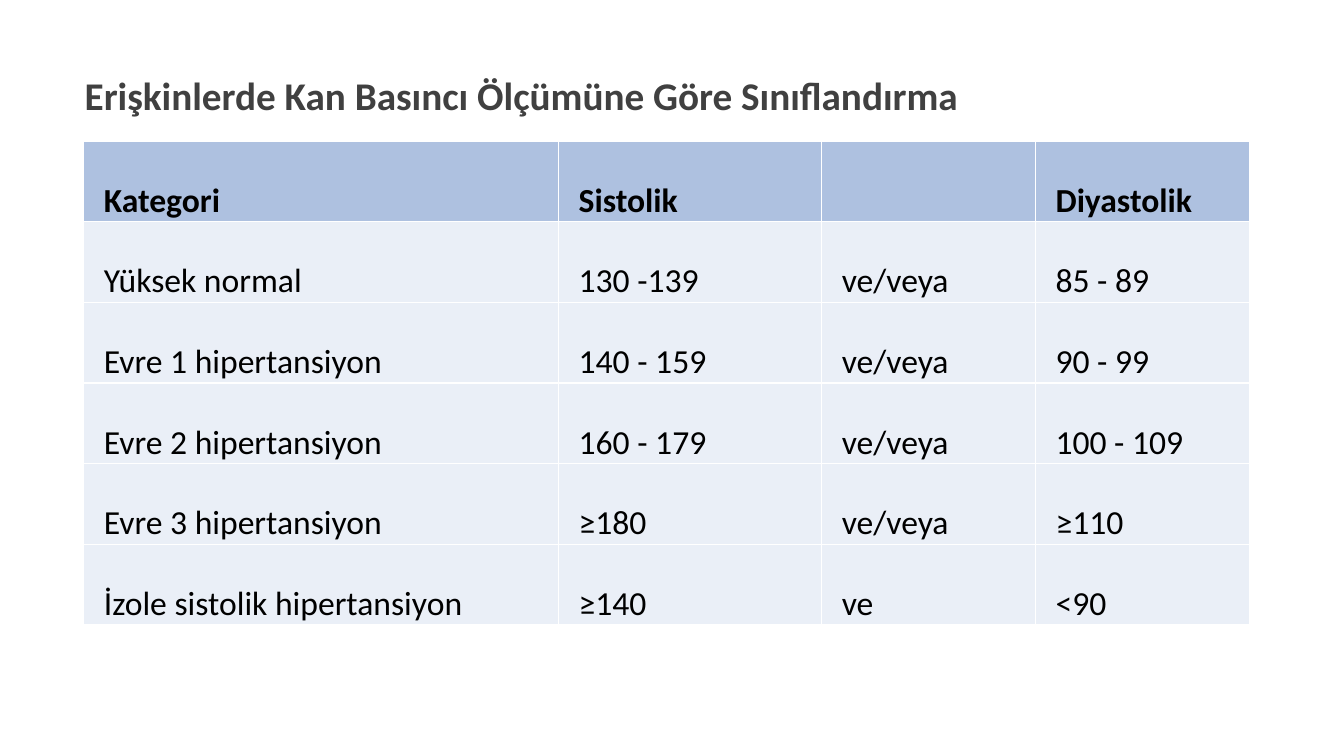
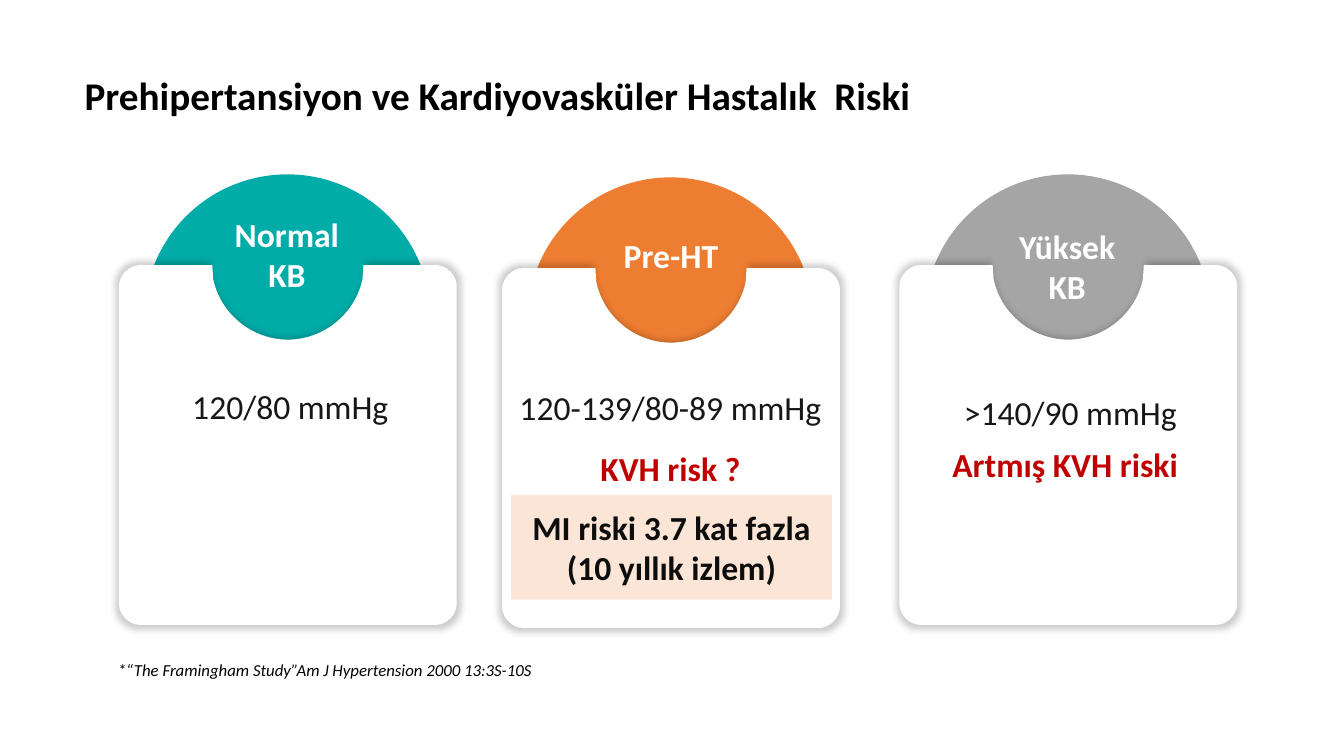
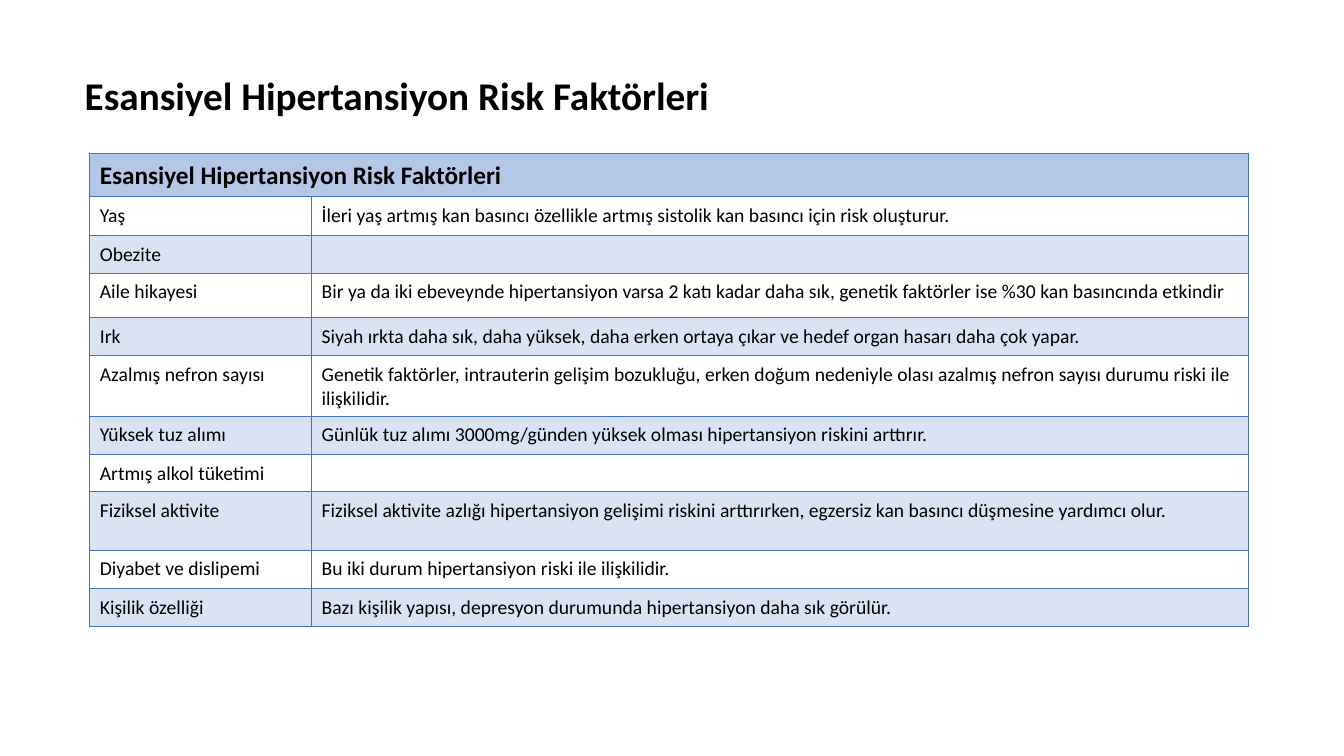
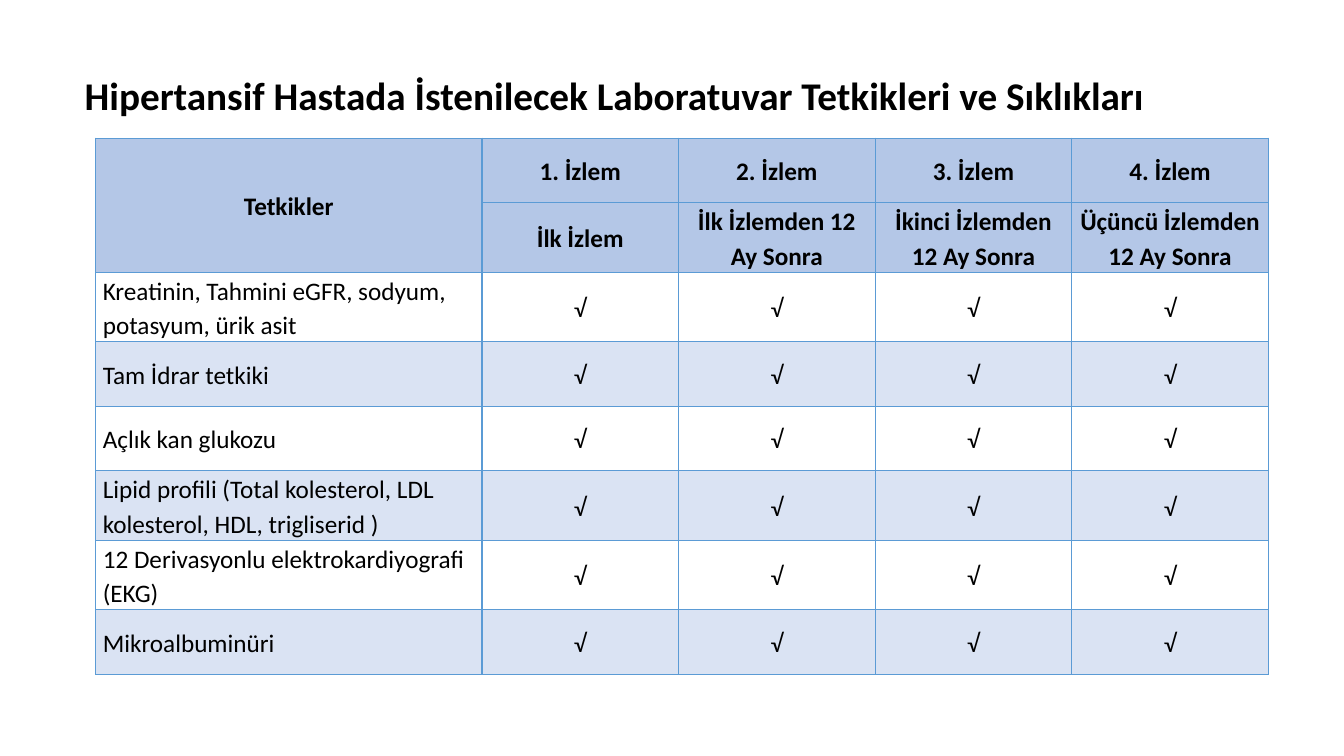
from lxml.etree import SubElement
from pptx import Presentation
from pptx.dml.color import RGBColor
from pptx.enum.shapes import MSO_SHAPE
from pptx.enum.text import MSO_ANCHOR, MSO_AUTO_SIZE, PP_ALIGN
from pptx.oxml.ns import qn
from pptx.util import Inches, Pt

FONT = "Calibri"
COLORS = {
    "black": "000000", "white": "FFFFFF", "gray_text": "404040",
    "ink": "181717", "note": "0D0D0D", "red": "C00000",
    "teal": "00ACA8", "orange": "ED7D31", "gray": "A5A5A5", "peach": "FBE5D6",
    "head_soft": "AEC1E0", "row_soft": "EAEFF7",
    "head": "B4C7E7", "band": "DAE3F3", "blue": "4472C4", "sky": "5B9BD5",
}


def rgb(name):
    """Return the palette colour called name."""
    return RGBColor.from_string(COLORS[name])


def add_run(p, text, size, color="black", bold=False, italic=False):
    """Add one formatted run to a paragraph."""
    r = p.add_run()
    r.text = text
    r.font.name, r.font.size = FONT, Pt(size)
    r.font.bold, r.font.italic = bold, italic
    r.font.color.rgb = rgb(color)


def add_title(s, text, color="black", width=10):
    """Place and format the slide title."""
    sp = s.shapes.title
    sp.left, sp.top, sp.width, sp.height = map(Inches, (0.74, 0.66, width, 0.57))
    tf = sp.text_frame
    tf.auto_size, tf.vertical_anchor = MSO_AUTO_SIZE.NONE, MSO_ANCHOR.TOP
    p = tf.paragraphs[0]
    p.alignment = PP_ALIGN.LEFT
    add_run(p, text, 28, color, bold=True)


def fill_text(tf, lines, size=24, align=PP_ALIGN.CENTER, spacing=None, italic=False):
    """Write (text, colour, bold) lines as paragraphs."""
    tf.word_wrap = True
    for i, (text, color, bold) in enumerate(lines):
        p = tf.add_paragraph() if i else tf.paragraphs[0]
        p.alignment, p.line_spacing = align, spacing
        add_run(p, text, size, color, bold, italic)


def add_text(shapes, at, lines, **style):
    """Add a text box at left, top, width, height."""
    fill_text(shapes.add_textbox(*map(Inches, at)).text_frame, lines, **style)


def add_solid(shapes, kind, at, color):
    """Add a preset shape with a plain fill and no line."""
    sp = shapes.add_shape(kind, *map(Inches, at))
    sp.shadow.inherit = False
    sp.fill.solid()
    sp.fill.fore_color.rgb = rgb(color)
    sp.line.fill.background()
    return sp


def add_soft_shadow(sp):
    """Give a shape an even, blurred shadow slightly larger than itself."""
    sp.shadow.inherit = False
    effects = sp._element.spPr.find(qn("a:effectLst"))
    shadow = SubElement(effects, qn("a:outerShdw"), blurRad=str(Pt(5)), sx="102000",
                        sy="102000", algn="ctr", rotWithShape="0")
    clr = SubElement(shadow, qn("a:srgbClr"), val=COLORS["black"])
    SubElement(clr, qn("a:alpha"), val="20000")


def set_outline(sp, steps):
    """Replace the outline of a freeform by (command, points) steps in inches."""
    outline = next(sp._element.iter(qn("a:path")))
    for child in list(outline):
        outline.remove(child)
    for command, *points in steps:
        step = SubElement(outline, qn(f"a:{command}"))
        for x, y in points:
            SubElement(step, qn("a:pt"), x=str(Inches(x)), y=str(Inches(y)))
    SubElement(outline, qn("a:close"))


def add_notched_card(shapes, left, top, w=3.35, h=3.57):
    """Add a rounded white card with a half-round notch in its top edge."""
    r, k, mid = 0.21, 0.1, w / 2
    fb = shapes.build_freeform(Inches(left), Inches(top), scale=1.0)
    fb.add_line_segments([(Inches(left + x), Inches(top + y)) for x, y in ((w, 0), (w, h), (0, h))])
    sp = fb.convert_to_shape()
    set_outline(sp, [
        ("moveTo", (r, 0)),
        ("lnTo", (mid - 0.75, 0)),
        ("lnTo", (mid - 0.74, 0.14)),
        ("cubicBezTo", (mid - 0.67, 0.48), (mid - 0.36, 0.74), (mid, 0.74)),
        ("cubicBezTo", (mid + 0.36, 0.74), (mid + 0.67, 0.48), (mid + 0.74, 0.14)),
        ("lnTo", (mid + 0.75, 0)),
        ("lnTo", (w - r, 0)),
        ("cubicBezTo", (w - k, 0), (w, k), (w, r)),
        ("lnTo", (w, h - r)),
        ("cubicBezTo", (w, h - k), (w - k, h), (w - r, h)),
        ("lnTo", (r, h)),
        ("cubicBezTo", (k, h), (0, h - k), (0, h - r)),
        ("lnTo", (0, r)),
        ("cubicBezTo", (0, k), (k, 0), (r, 0)),
    ])
    sp.fill.solid()
    sp.fill.fore_color.rgb = rgb("white")
    sp.line.fill.background()
    add_soft_shadow(sp)


def add_risk_card(s, left, top, color, label, label_at, texts, note=None):
    """Add one grouped card: disc, notched panel, label and texts."""
    shapes = s.shapes.add_group_shape().shapes
    add_solid(shapes, MSO_SHAPE.OVAL, (left + 0.25, top - 0.9, 2.84, 2.84), color)
    add_notched_card(shapes, left, top)
    add_text(shapes, label_at, [(label, "white", True)])
    for at, spacing, lines in texts:
        add_text(shapes, at, lines, spacing=spacing)
    if note:
        sp = add_solid(shapes, MSO_SHAPE.RECTANGLE, (left + 0.09, top + 2.25, 3.18, 1.04), "peach")
        sp.text_frame.vertical_anchor = MSO_ANCHOR.MIDDLE
        fill_text(sp.text_frame, [(line, "note", True) for line in note])


def set_borders(cell, color):
    """Draw a one-point line on each side of a cell."""
    tc_pr = cell._tc.get_or_add_tcPr()
    for side in ("a:lnL", "a:lnR", "a:lnT", "a:lnB"):
        ln = SubElement(tc_pr, qn(side), w=str(Pt(1)))
        SubElement(SubElement(ln, qn("a:solidFill")), qn("a:srgbClr"), val=COLORS[color])


def format_cell(cell, text, fill, border, size, insets, bold=False,
                align=PP_ALIGN.LEFT, anchor=MSO_ANCHOR.TOP, spacing=None, after=None):
    """Write and format one table cell."""
    set_borders(cell, border)
    if fill:
        cell.fill.solid()
        cell.fill.fore_color.rgb = rgb(fill)
    else:
        cell.fill.background()
    (cell.margin_left, cell.margin_top,
     cell.margin_right, cell.margin_bottom) = map(Inches, insets)
    cell.vertical_anchor = anchor
    p = cell.text_frame.paragraphs[0]
    p.alignment, p.line_spacing, p.space_after = align, spacing, after
    if text:
        add_run(p, text, size, bold=bold)
    else:
        SubElement(p._p, qn("a:endParaRPr"), sz=str(size * 100))


def add_grid(s, at, cols, heights, rows, style):
    """Add a table; style(row, col) gives the format of each cell."""
    size = (sum(cols), sum(heights))
    table = s.shapes.add_table(len(rows), len(cols), *map(Inches, at + size)).table
    table.first_row = table.horz_banding = False
    for col, width in zip(table.columns, cols):
        col.width = Inches(width)
    for row, height in zip(table.rows, heights):
        row.height = Inches(height)
    for i, texts in enumerate(rows):
        for j, text in enumerate(texts):
            format_cell(table.cell(i, j), text, **style(i, j))
    return table


def classification_slide(s):
    """Build the blood pressure classification table."""
    add_title(s, "Erişkinlerde Kan Basıncı Ölçümüne Göre Sınıflandırma", "gray_text")
    rows = [
        ("Kategori", "Sistolik", "", "Diyastolik"),
        ("Yüksek normal", "130 -139", "ve/veya", "85 - 89"),
        ("Evre 1 hipertansiyon", "140 - 159", "ve/veya", "90 - 99"),
        ("Evre 2 hipertansiyon", "160 - 179", "ve/veya", "100 - 109"),
        ("Evre 3 hipertansiyon", "≥180", "ve/veya", "≥110"),
        ("İzole sistolik hipertansiyon", "≥140", "ve", "<90"),
    ]

    def style(i, j):
        """Format a header or plain row."""
        return dict(fill="row_soft" if i else "head_soft", border="white", size=24,
                    insets=(0.2, 0, 0.06, 0), bold=i == 0, spacing=1.96)

    add_grid(s, (0.83, 1.4), (4.71, 2.61, 2.12, 2.12), [0.8] * 6, rows, style)


def risk_slide(s):
    """Build the three risk cards."""
    add_title(s, "Prehipertansiyon ve Kardiyovasküler Hastalık  Riski")
    add_text(s.shapes, (1.07, 6.5, 4.69, 0.3),
             [("*“The Framingham Study”Am J Hypertension 2000 13:3S-10S", "black", False)],
             size=12, align=PP_ALIGN.LEFT, italic=True)
    add_risk_card(s, 1.18, 2.63, "teal", "Normal KB", (2.14, 2.07, 1.41, 0.91),
                  [((1.21, 3.58, 3.34, 0.71), 1.5, [("120/80 mmHg", "ink", False)])])
    add_risk_card(s, 4.98, 2.66, "orange", "Pre-HT", (6.03, 2.28, 1.25, 0.5),
                  [((4.98, 3.59, 3.34, 1.72), 1.5, [("120-139/80-89 mmHg", "ink", False),
                                                    ("KVH risk ?", "red", True)])],
                  ("MI riski 3.7 kat fazla", "(10 yıllık izlem)"))
    add_risk_card(s, 8.92, 2.63, "gray", "Yüksek KB", (9.96, 2.19, 1.25, 0.91),
                  [((9.07, 3.64, 3.09, 0.71), 1.5, [(">140/90 mmHg", "ink", False)]),
                   ((9.26, 4.35, 2.61, 0.5), None, [("Artmış KVH riski", "red", True)])])


def factors_slide(s):
    """Build the risk factor table."""
    title = "Esansiyel Hipertansiyon Risk Faktörleri"
    add_title(s, title)
    rows = [
        (title, ""),
        ("Yaş", "İleri yaş artmış kan basıncı özellikle artmış sistolik kan basıncı için risk oluşturur."),
        ("Obezite", ""),
        ("Aile hikayesi", "Bir ya da iki ebeveynde hipertansiyon varsa 2 katı kadar daha sık, "
                          "genetik faktörler ise %30 kan basıncında etkindir"),
        ("Irk", "Siyah ırkta daha sık, daha yüksek, daha erken ortaya çıkar ve "
                "hedef organ hasarı daha çok yapar."),
        ("Azalmış nefron sayısı", "Genetik faktörler, intrauterin gelişim bozukluğu, erken doğum nedeniyle "
                                  "olası azalmış nefron sayısı durumu riski ile ilişkilidir."),
        ("Yüksek tuz alımı", "Günlük tuz alımı 3000mg/günden yüksek olması hipertansiyon riskini arttırır."),
        ("Artmış alkol tüketimi", ""),
        ("Fiziksel aktivite", "Fiziksel aktivite azlığı hipertansiyon gelişimi riskini arttırırken, "
                              "egzersiz kan basıncı düşmesine yardımcı olur."),
        ("Diyabet ve dislipemi", "Bu iki durum hipertansiyon riski ile ilişkilidir."),
        ("Kişilik özelliği", "Bazı kişilik yapısı, depresyon durumunda hipertansiyon daha sık görülür."),
    ]

    def style(i, j):
        """Format the header and the banded rows."""
        fill = "head" if i == 0 else None if i % 2 else "band"
        return dict(fill=fill, border="blue", size=14 if i else 18,
                    insets=(0.1, 0.07, 0.1, 0.05), bold=i == 0)

    heights = (0.43, 0.39, 0.37, 0.44, 0.38, 0.6, 0.38, 0.37, 0.58, 0.38, 0.38)
    table = add_grid(s, (0.89, 1.52), (2.2, 9.29), heights, rows, style)
    table.cell(0, 0).merge(table.cell(0, 1))


def tests_slide(s):
    """Build the laboratory test schedule."""
    add_title(s, "Hipertansif Hastada İstenilecek Laboratuvar Tetkikleri ve Sıklıkları", width=11.35)
    tests = (
        "Kreatinin, Tahmini eGFR, sodyum, potasyum, ürik asit",
        "Tam İdrar tetkiki",
        "Açlık kan glukozu",
        "Lipid profili (Total kolesterol, LDL kolesterol, HDL, trigliserid )",
        "12 Derivasyonlu elektrokardiyografi (EKG)",
        "Mikroalbuminüri",
    )
    rows = [
        ("Tetkikler", *(f"{n}. İzlem" for n in range(1, 5))),
        ("", "İlk İzlem", "İlk İzlemden 12 Ay Sonra", "İkinci İzlemden 12 Ay Sonra",
         "Üçüncü İzlemden 12 Ay Sonra"),
        *((test, *"√√√√") for test in tests),
    ]

    def style(i, j):
        """Format the two header rows and the banded rows."""
        fill = "head" if i < 2 else "band" if i % 2 else None
        align = PP_ALIGN.LEFT if i > 1 and j == 0 else PP_ALIGN.CENTER
        return dict(fill=fill, border="sky", size=18, insets=(0.07, 0, 0.07, 0), bold=i < 2,
                    align=align, anchor=MSO_ANCHOR.MIDDLE, spacing=1.13, after=Pt(10))

    heights = (0.64, 0.69, 0.69, 0.64, 0.64, 0.69, 0.69, 0.64)
    table = add_grid(s, (0.95, 1.37), [3.83] + [1.95] * 4, heights, rows, style)
    table.cell(0, 0).merge(table.cell(1, 0))


def main():
    """Build the presentation and save it."""
    prs = Presentation()
    prs.slide_width, prs.slide_height = Inches(13.33), Inches(7.5)
    for build in (classification_slide, risk_slide, factors_slide, tests_slide):
        build(prs.slides.add_slide(prs.slide_layouts[5]))
    prs.save("out.pptx")


if __name__ == "__main__":
    main()
